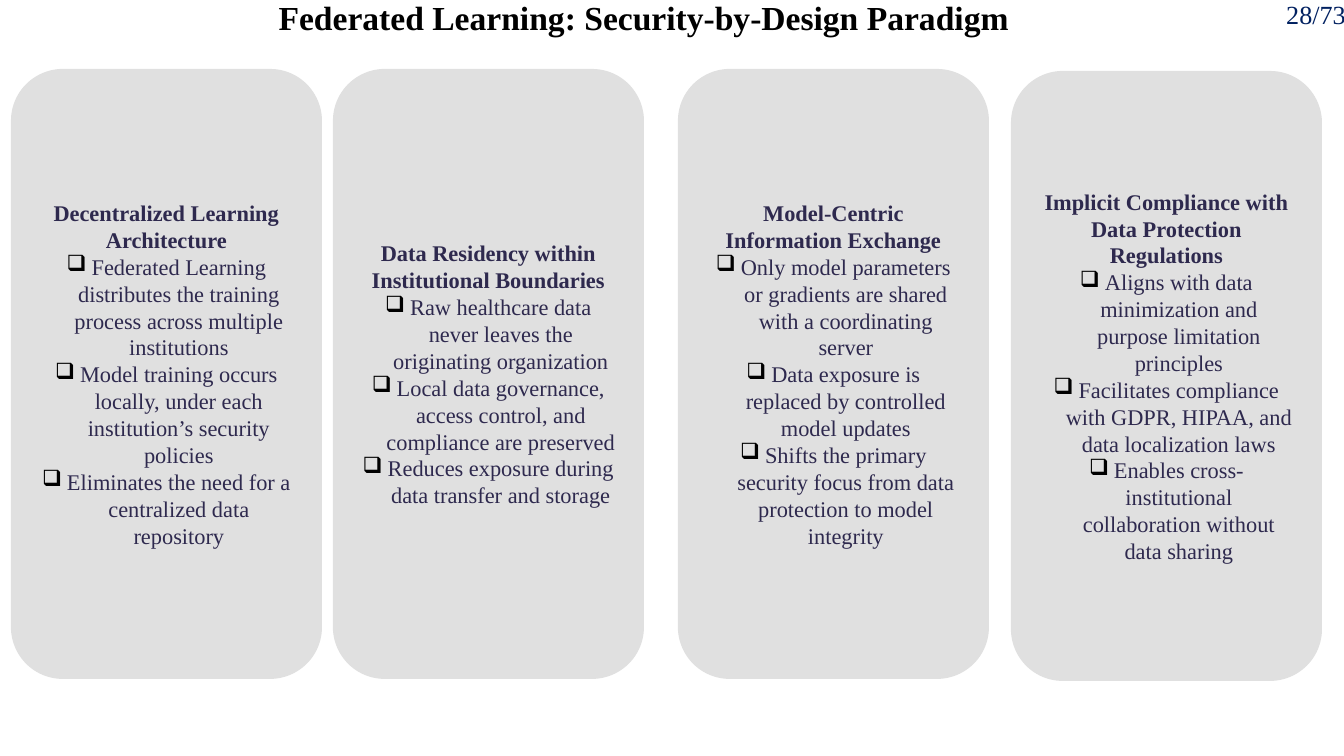
import dataclasses

import lxml.etree
import pptx
import pptx.dml.color
import pptx.enum.shapes
import pptx.enum.text
import pptx.oxml.ns
import pptx.util

PX = 914400 / 134.4
FONT = "Times New Roman"
CENTER = pptx.enum.text.PP_ALIGN.CENTER
CARD_WIDTH, CARD_HEIGHT = 311, 610
BULLET_INDENT = 25


@dataclasses.dataclass(frozen=True)
class Card:
    left: int
    top: int
    heading: str
    points: tuple[str, ...]


CARDS = (
    Card(11, 69, "Decentralized Learning Architecture", (
        "Federated Learning distributes the training process across multiple institutions",
        "Model training occurs locally, under each institution’s security policies",
        "Eliminates the need for a centralized data repository",
    )),
    Card(333, 69, "Data Residency within Institutional Boundaries", (
        "Raw healthcare data never leaves the originating organization",
        "Local data governance, access control, and compliance are preserved",
        "Reduces exposure during data transfer and storage",
    )),
    Card(678, 69, "Model-Centric Information Exchange", (
        "Only model parameters or gradients are shared with a coordinating server",
        "Data exposure is replaced by controlled model updates",
        "Shifts the primary security focus from data protection to model integrity",
    )),
    Card(1011, 71, "Implicit Compliance with Data Protection Regulations", (
        "Aligns with data minimization and purpose limitation principles",
        "Facilitates compliance with GDPR, HIPAA, and data localization laws",
        "Enables cross-institutional collaboration without data sharing",
    )),
)


def px(length: int) -> pptx.util.Emu:
    return pptx.util.Emu(round(length * PX))


def color(value: str) -> pptx.dml.color.RGBColor:
    return pptx.dml.color.RGBColor.from_string(value)


def add_run(paragraph, text: str, size: int, ink: str, bold: bool = False) -> None:
    run = paragraph.add_run()
    run.text = text
    run.font.name = FONT
    run.font.size = pptx.util.Pt(size)
    run.font.bold = bold
    run.font.color.rgb = color(ink)


def set_bullet(paragraph) -> None:
    paragraph.level = 1
    properties = paragraph._p.get_or_add_pPr()
    properties.set("marL", str(px(BULLET_INDENT)))
    properties.set("indent", str(px(-BULLET_INDENT)))
    qn = pptx.oxml.ns.qn
    bullet_color = lxml.etree.SubElement(properties, qn("a:buClr"))
    lxml.etree.SubElement(bullet_color, qn("a:srgbClr"), val="000000")
    lxml.etree.SubElement(properties, qn("a:buChar"), char="❑")


def add_title(slide, text: str) -> None:
    title = slide.shapes.title
    title.left, title.top, title.width, title.height = map(px, (214, -16, 860, 51))
    frame = title.text_frame
    frame.margin_left = frame.margin_right = px(13)
    frame.margin_top = frame.margin_bottom = px(13)
    frame.vertical_anchor = pptx.enum.text.MSO_ANCHOR.TOP
    frame.auto_size = pptx.enum.text.MSO_AUTO_SIZE.NONE
    frame.paragraphs[0].alignment = CENTER
    add_run(frame.paragraphs[0], text, 18, "000000", bold=True)


def add_card(slide, card: Card) -> None:
    panel = slide.shapes.add_shape(
        pptx.enum.shapes.MSO_SHAPE.ROUNDED_RECTANGLE,
        px(card.left), px(card.top), px(CARD_WIDTH), px(CARD_HEIGHT))
    panel.shadow.inherit = False
    panel.fill.solid()
    panel.fill.fore_color.rgb = color("E0E0E0")
    panel.line.fill.background()

    frame = panel.text_frame
    frame.word_wrap = True
    frame.vertical_anchor = pptx.enum.text.MSO_ANCHOR.MIDDLE
    heading = frame.paragraphs[0]
    heading.alignment = CENTER
    add_run(heading, card.heading, 12, "2E294E", bold=True)
    for text in card.points:
        point = frame.add_paragraph()
        point.alignment = CENTER
        set_bullet(point)
        add_run(point, text, 12, "2E294E")


def add_page_number(slide, text: str) -> None:
    number = slide.shapes.add_textbox(*map(px, (1273, -8, 95, 46)))
    number.text_frame.word_wrap = True
    number.text_frame.auto_size = pptx.enum.text.MSO_AUTO_SIZE.SHAPE_TO_FIT_TEXT
    add_run(number.text_frame.paragraphs[0], text, 14, "002060")


def main() -> None:
    presentation = pptx.Presentation()
    presentation.slide_width, presentation.slide_height = px(1344), px(756)
    slide = presentation.slides.add_slide(presentation.slide_layouts[5])

    # Heading, four pillars, page number
    add_title(slide, "Federated Learning: Security-by-Design Paradigm")
    for card in CARDS:
        add_card(slide, card)
    add_page_number(slide, "28/73")

    presentation.save("out.pptx")


if __name__ == "__main__":
    main()
